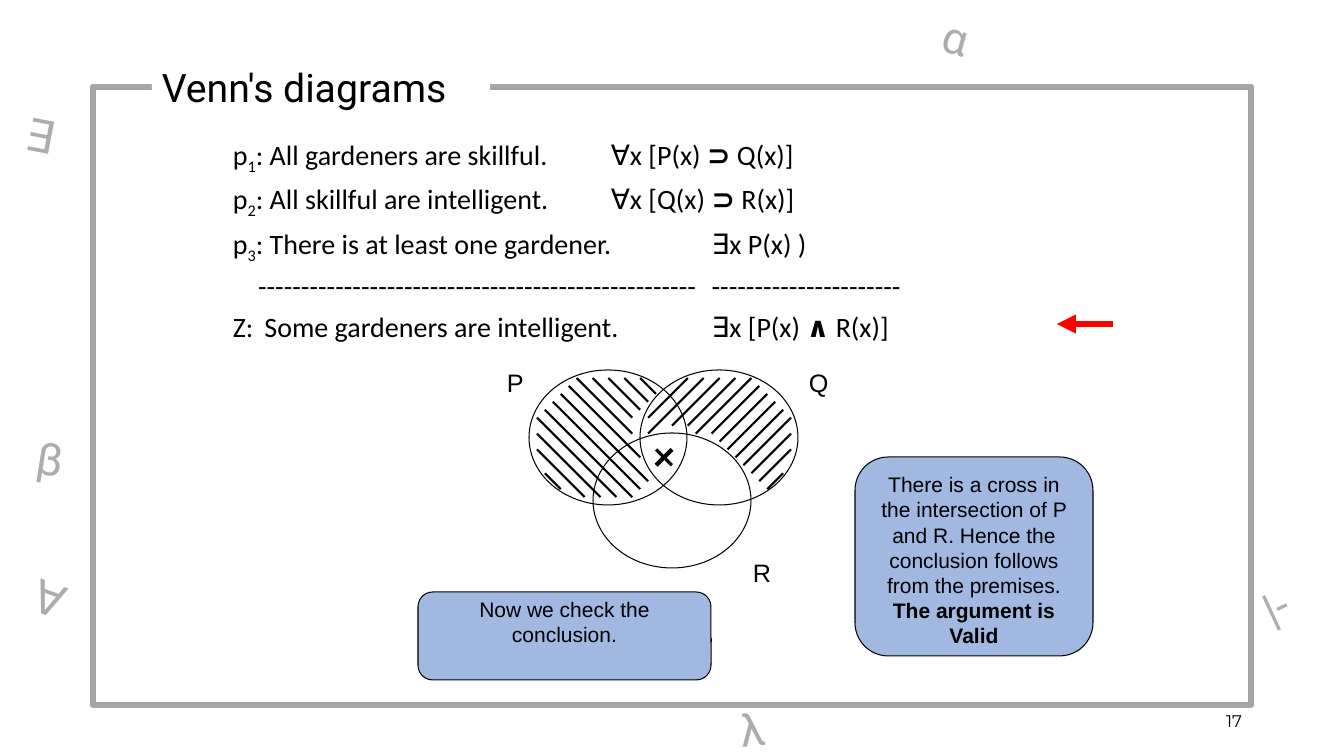
from lxml import etree
from pptx import Presentation, util as u
from pptx.dml.color import RGBColor
from pptx.enum import shapes, text
from pptx.oxml.ns import qn

EMU_PER_PX = 914400 / 100.8
BLACK, GLYPH_GRAY, FRAME_GRAY = "000000", "AEABAB", "A6A6A6"

ARGUMENT = [
    [("p", ""), ("1", "sub"), (": All gardeners are skillful.\t\t∀x [P(x) ", ""), ("⊃", "bold"), (" Q(x)]", "")],
    [("p", ""), ("2", "sub"), (": All skillful are intelligent.\t\t∀x [Q(x) ", ""), ("⊃", "bold"), (" R(x)]", "")],
    [("p", ""), ("3", "sub"), (": There is at least one gardener.\t\t∃x P(x) )", "")],
    [("\t" + "-" * 51 + "\t" + "-" * 22, "")],
    [("Z:\t Some gardeners are intelligent. \t\t∃x [P(x) ", ""), ("∧", "bold"), (" R(x)]", "")],
]
SETS = [
    ("P", (529, 370), (497, 362)),
    ("Q", (640, 370), (799, 362)),
    ("R", (593, 433), (743, 552)),
]
GRID_LEFT, GRID_TOP, GRID_STEP = 537, 378, 7.94
HATCH_P = [(13, 0, 2), (11, 0, 3), (9, 0, 4), (7, 0, 5), (5, 0, 7), (4, 1, 9), (3, 2, 11),
           (2, 3, 11), (1, 4, 11), (0, 7, 8), (0, 5, 10), (0, 9, 6), (1, 12, 2)]
HATCH_Q = [(19, 0, 5), (21, 0, 7), (23, 0, 6), (25, 0, 6), (27, 0, 7), (28, 1, 6), (29, 2, 6),
           (30, 3, 6), (31, 4, 6), (32, 7, 5), (32, 5, 6), (32, 9, 4), (31, 12, 2)]
STROKES = [
    (HATCH_P, 1, 1.5),
    (HATCH_Q, -1, 1.5),
    ([(15, 9, 2)], 1, 2.25),
    ([(17, 9, 2)], -1, 3),
]
CALLOUTS = [
    ((418, 592, 293, 88), (0.501, 0.027, 0.167), 0, ["Now we check the conclusion."]),
    ((855, 457, 238, 199), (-0.5, -0.103, 0.167), 5,
     ["There is a cross in the intersection of P and R. Hence the conclusion follows from the premises.",
      "The argument is Valid"]),
]
GLYPHS = [
    ("∀", (24, 568, 60, 65), 20),
    ("∃", (16, 104, 64, 65), 11),
    ("α", (933, 8, 64, 65), 16),
    ("β", (27, 427, 58, 65), 9),
    (" λ", (719, 696, 82, 65), 354),
    ("|-", (1253, 569, 69, 65), 335),
]


def px(n):
    return u.Emu(round(n * EMU_PER_PX))


def color(value):
    return RGBColor.from_string(value)


def style(p, size, font, fill=BLACK, align=None):
    p.alignment = align
    for r in p.runs:
        r.font.size, r.font.name = u.Pt(size), font
        r.font.color.rgb = color(fill)


def add_text(s, box, content, size, font, fill=BLACK, align=None):
    sp = s.shapes.add_textbox(*map(px, box))
    tf = sp.text_frame
    tf.word_wrap = True
    tf.text = content
    style(tf.paragraphs[0], size, font, fill, align)
    return sp


def add_shape(s, kind, box, fill=None, line=None, width=0.75):
    sp = s.shapes.add_shape(kind, *map(px, box))
    sp.shadow.inherit = False
    if fill:
        sp.fill.solid()
        sp.fill.fore_color.rgb = color(fill)
    else:
        sp.fill.background()
    if line:
        sp.line.color.rgb = color(line)
        sp.line.width = u.Pt(width)
    else:
        sp.line.fill.background()
    sp.text_frame.vertical_anchor = text.MSO_ANCHOR.TOP
    return sp


def add_line(s, x1, y1, x2, y2, line, width):
    cx = s.shapes.add_connector(shapes.MSO_CONNECTOR.STRAIGHT, px(x1), px(y1), px(x2), px(y2))
    cx.line.color.rgb = color(line)
    cx.line.width = u.Pt(width)
    etree.SubElement(cx._element.spPr, qn("a:effectLst"))
    return cx


def add_argument(s):
    tf = s.shapes.add_textbox(px(223), px(136), px(898), px(207)).text_frame
    tf.word_wrap = True
    for i, parts in enumerate(ARGUMENT):
        p = tf.add_paragraph() if i else tf.paragraphs[0]
        p.line_spacing, p.space_before = 0.8, u.Pt(10)
        pPr = p._p.get_or_add_pPr()
        pPr.set("marL", str(u.Inches(0.25)))
        pPr.set("indent", str(-u.Inches(0.25)))
        for content, kind in parts:
            r = p.add_run()
            r.text = content
            if kind == "bold":
                r.font.bold = True
            elif kind == "sub":
                r.font._element.set("baseline", "-25000")
        style(p, 20, "Calibri")


def add_diagram(s):
    for name, corner, label in SETS:
        add_shape(s, shapes.MSO_SHAPE.OVAL, (*corner, 158, 135), line=BLACK)
        add_text(s, (*label, 47, 40), name, 18, "Arial")
    for strokes, slope, width in STROKES:
        for col, row, length in strokes:
            x, y = GRID_LEFT + col * GRID_STEP, GRID_TOP + row * GRID_STEP
            run = length * GRID_STEP
            add_line(s, x, y, x + slope * run, y + run, BLACK, width)


def add_callout(s, box, adjustments, top, lines):
    sp = add_shape(s, shapes.MSO_SHAPE.ROUNDED_RECTANGULAR_CALLOUT, box, "4472C4", BLACK)
    for i, value in enumerate(adjustments):
        sp.adjustments[i] = value
    clr = sp._element.spPr.find(qn("a:solidFill"))[0]
    etree.SubElement(clr, qn("a:alpha"), val="50000")
    tf = sp.text_frame
    tf.margin_top = px(top)
    tf.word_wrap = True
    tf.text = "\n".join(lines)
    for i, p in enumerate(tf.paragraphs):
        style(p, 15, "Arial", align=text.PP_ALIGN.CENTER)
        p.runs[0].font.bold = i > 0


def main():
    prs = Presentation()
    prs.slide_width, prs.slide_height = px(1344), px(756)
    s = prs.slides.add_slide(prs.slide_layouts[6])

    add_argument(s)
    number = add_text(s, (950, 701, 302, 40), "17", 12, "Montserrat", align=text.PP_ALIGN.RIGHT)
    number.text_frame.vertical_anchor = text.MSO_ANCHOR.MIDDLE
    add_diagram(s)

    arrow = add_line(s, 1057, 324, 1113, 324, "FF0000", 4.5)
    etree.SubElement(arrow.line._get_or_add_ln(), qn("a:headEnd"), type="triangle")
    for callout in CALLOUTS:
        add_callout(s, *callout)

    add_shape(s, shapes.MSO_SHAPE.RECTANGLE, (93, 87, 1158, 618), line=FRAME_GRAY, width=4.5)
    title = add_shape(s, shapes.MSO_SHAPE.RECTANGLE, (152, 56, 338, 61), "FFFFFF")
    tf = title.text_frame
    tf.vertical_anchor = text.MSO_ANCHOR.MIDDLE
    tf.text = "Venn's diagrams"
    style(tf.paragraphs[0], 28, "Roboto", align=text.PP_ALIGN.LEFT)

    for glyph, box, angle in GLYPHS:
        add_text(s, box, glyph, 32, "Roboto", GLYPH_GRAY).rotation = angle
    prs.save("out.pptx")


if __name__ == "__main__":
    main()
